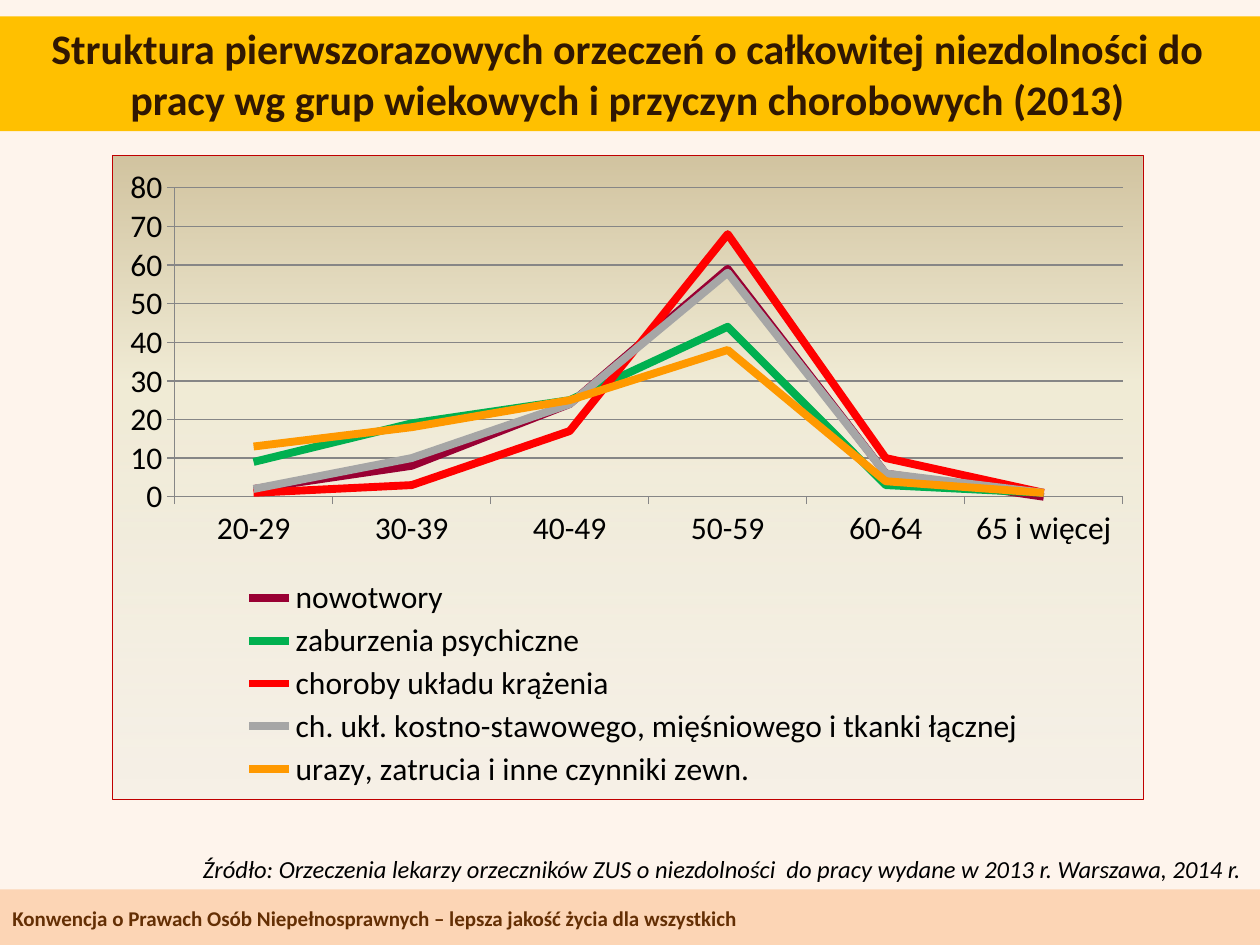
from pptx import Presentation
from pptx import util as u
from pptx.chart.data import CategoryChartData
from pptx.dml.color import RGBColor
from pptx.enum import chart as ch, shapes, text
from pptx.oxml import parse_xml
from pptx.oxml.ns import nsdecls, qn

AGE_GROUPS = ["20-29", "30-39", "40-49", "50-59", "60-64", "65 i więcej"]
CAUSES = [
    ("nowotwory", "990033", (2, 8, 24, 59, 6, 0)),
    ("zaburzenia psychiczne", "00B050", (9, 19, 25, 44, 3, 1)),
    ("choroby układu krążenia", "FF0000", (1, 3, 17, 68, 10, 1)),
    ("ch. ukł. kostno-stawowego, mięśniowego i tkanki łącznej", "A6A6A6", (2, 10, 24, 58, 6, 1)),
    ("urazy, zatrucia i inne czynniki zewn.", "FF9900", (13, 18, 25, 38, 4, 1)),
]


def inches(*lengths):
    """Convert a box given in inches."""
    return [u.Inches(length) for length in lengths]


def paint(colour_format, colour):
    """Set a colour from its hex string."""
    colour_format.rgb = RGBColor.from_string(colour)


def fill_solid(fill, colour):
    """Give a fill one plain colour."""
    fill.solid()
    paint(fill.fore_color, colour)


def write(frame, wording, size, colour, align, bold=False, italic=False):
    """Put one formatted run in a text frame and return its paragraph."""
    frame.word_wrap = True
    paragraph = frame.paragraphs[0]
    paragraph.alignment = align
    run = paragraph.add_run()
    run.text = wording
    run.font.name = "Calibri"
    run.font.size = u.Pt(size)
    run.font.bold = bold
    run.font.italic = italic
    paint(run.font.color, colour)
    return paragraph


def add_title(slide, box):
    """Place the slide title on its yellow band."""
    title = slide.shapes.title
    title.left, title.top, title.width, title.height = inches(*box)
    fill_solid(title.fill, "FFC000")
    frame = title.text_frame
    frame.vertical_anchor = text.MSO_ANCHOR.TOP
    frame.auto_size = text.MSO_AUTO_SIZE.SHAPE_TO_FIT_TEXT
    write(frame, "Struktura pierwszorazowych orzeczeń o całkowitej niezdolności do pracy "
          "wg grup wiekowych i przyczyn chorobowych (2013)",
          24, "301702", text.PP_ALIGN.CENTER, bold=True)


def add_footer(slide, box):
    """Place the footer band with the conference motto."""
    left, top, width, height = box
    band = slide.shapes.add_shape(shapes.MSO_SHAPE.RECTANGLE, *inches(*box))
    band.shadow.inherit = False
    fill_solid(band.fill, "FCD5B5")
    band.line.fill.background()
    motto = slide.shapes.add_textbox(*inches(left, top + 0.07, width, height - 0.13))
    motto.text_frame.vertical_anchor = text.MSO_ANCHOR.MIDDLE
    write(motto.text_frame, "Konwencja o Prawach Osób Niepełnosprawnych – lepsza jakość życia "
          "dla wszystkich", 12, "642F04", text.PP_ALIGN.LEFT, bold=True)


def add_source_note(slide, box):
    """Place the right-aligned source line with its hanging indent."""
    note = slide.shapes.add_textbox(*inches(*box))
    paragraph = write(note.text_frame, "Źródło: Orzeczenia lekarzy orzeczników ZUS o niezdolności  "
                      "do pracy wydane w 2013 r. Warszawa, 2014 r. ",
                      14, "000000", text.PP_ALIGN.RIGHT, italic=True)
    properties = paragraph._p.get_or_add_pPr()
    properties.set("marL", str(u.Inches(0.69)))
    properties.set("indent", str(u.Inches(-0.69)))


def set_layout(part, position, box, target=""):
    """Fix a chart part at fractions of the chart area."""
    for old in part.findall(qn("c:layout")):
        part.remove(old)
    sizes = "".join(f'<c:{tag} val="{value}"/>' for tag, value in zip("xywh", box))
    part.insert(position, parse_xml(
        f'<c:layout {nsdecls("c")}><c:manualLayout>{target}<c:xMode val="edge"/>'
        f'<c:yMode val="edge"/>{sizes}</c:manualLayout></c:layout>'))


def style_chart_area(chart):
    """Give the chart its sand gradient and red border."""
    stops = [(0, "EEECE1", '<a:alpha val="47000"/>'), (65, "F0EBD5", ""), (100, "D1C39F", "")]
    gradient = "".join(f'<a:gs pos="{place * 1000}"><a:srgbClr val="{colour}">{alpha}</a:srgbClr></a:gs>'
                       for place, colour, alpha in stops)
    area = parse_xml(
        f'<c:spPr {nsdecls("c", "a")}><a:gradFill><a:gsLst>{gradient}</a:gsLst>'
        '<a:lin ang="16200000" scaled="0"/></a:gradFill><a:ln w="9525"><a:solidFill>'
        '<a:srgbClr val="C00000"/></a:solidFill></a:ln></c:spPr>')
    chart._chartSpace.find(qn("c:chart")).addnext(area)


def add_cause_chart(slide, box):
    """Place the line chart of causes by age group."""
    data = CategoryChartData(number_format="0")
    data.categories = AGE_GROUPS
    for cause, _, shares in CAUSES:
        data.add_series(cause, shares)
    chart = slide.shapes.add_chart(ch.XL_CHART_TYPE.LINE, *inches(*box), data).chart
    chart.has_title = False
    chart.font.name = "Calibri"
    chart.font.size = u.Pt(18)
    paint(chart.font.color, "000000")
    style_chart_area(chart)

    plot = chart.plots[0]
    plot.vary_by_categories = False
    for series, (_, colour, _) in zip(plot.series, CAUSES):
        series.smooth = False
        series.marker.style = ch.XL_MARKER_STYLE.NONE
        series.format.line.width = u.Pt(4.5)
        paint(series.format.line.color, colour)

    shares_axis = chart.value_axis
    shares_axis.minimum_scale, shares_axis.maximum_scale = 0, 80
    shares_axis.major_unit = 10
    shares_axis.has_major_gridlines = True
    chart.category_axis.has_major_gridlines = False
    for axis in (chart.category_axis, shares_axis):
        axis.major_tick_mark = ch.XL_TICK_MARK.OUTSIDE
        axis.minor_tick_mark = ch.XL_TICK_MARK.NONE
    for lined in (chart.category_axis, shares_axis, shares_axis.major_gridlines):
        lined.format.line.width = u.Pt(0.75)
        paint(lined.format.line.color, "868686")

    chart.has_legend = True
    chart.legend.position = ch.XL_LEGEND_POSITION.BOTTOM
    chart.legend.include_in_layout = False
    set_layout(chart.legend._element, 1, (0.12, 0.65, 0.77, 0.34))
    plot_area = chart._chartSpace.find(qn("c:chart")).find(qn("c:plotArea"))
    set_layout(plot_area, 0, (0.06, 0.05, 0.92, 0.48), '<c:layoutTarget val="inner"/>')


def main():
    """Build and save the slide."""
    deck = Presentation()
    deck.slide_width, deck.slide_height = inches(10, 7.5)
    slide = deck.slides.add_slide(deck.slide_layouts[5])
    fill_solid(slide.background.fill, "FEF4EC")
    add_footer(slide, (0, 7.06, 10, 0.44))
    add_title(slide, (-0.04, 0.13, 10.04, 0.91))
    add_cause_chart(slide, (0.89, 1.23, 8.19, 5.12))
    add_source_note(slide, (1.22, 6.73, 8.78, 0.34))
    deck.save("out.pptx")


if __name__ == "__main__":
    main()
